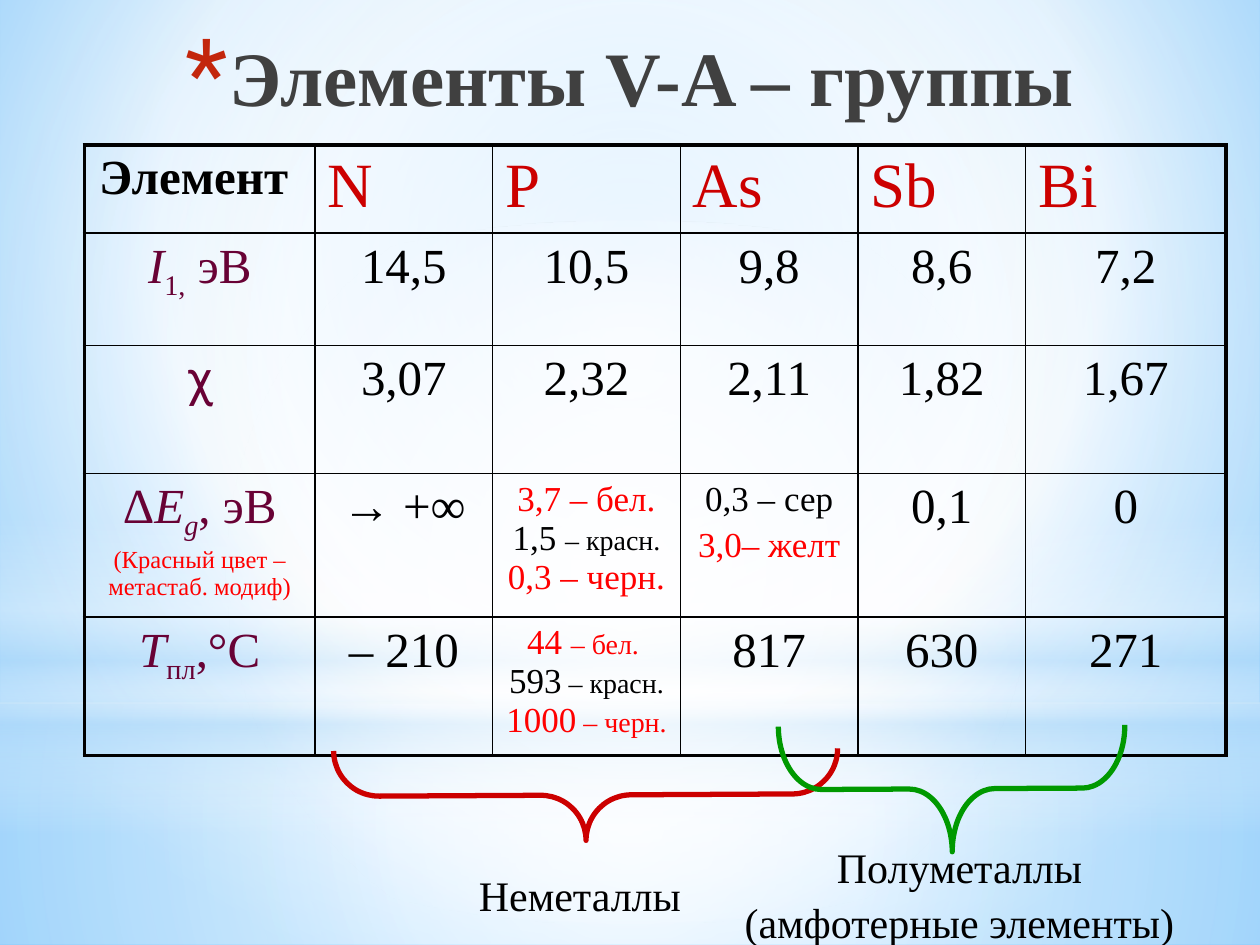
from dataclasses import dataclass

from lxml.etree import SubElement
from pptx import Presentation
from pptx.dml.color import RGBColor
from pptx.enum.shapes import MSO_SHAPE as Form
from pptx.enum.text import MSO_ANCHOR as Anchor, PP_ALIGN as Align
from pptx.oxml import parse_xml
from pptx.oxml.ns import nsdecls, qn
from pptx.util import Inches, Pt


@dataclass(frozen=True)
class Theme:
    font: str = "Times New Roman"
    symbol: str = "Roboto"
    ink: str = "000000"
    title: str = "404040"
    star: str = "C3260C"
    head: str = "CC0000"
    label: str = "680235"
    red: str = "FF0000"
    green: str = "009900"
    white: str = "FFFFFF"
    sky: str = "B4DCFA"
    big: int = 44
    symbols: int = 36
    body: int = 28
    note: int = 24
    small: int = 20
    fine: int = 16
    tiny: int = 14


T = Theme()
COLS = [1.83, 1.41, 1.49, 1.41, 1.33, 1.59]
ROWS = [0.68, 0.89, 1.02, 1.06, 1.02]
LAB = dict(color=T.label)
ITAL = dict(color=T.label, italic=True)
SUB = dict(color=T.label, base=-25)
RED = dict(color=T.red, size=T.small)
BLACK = dict(size=T.small)


def grade(parent, stops, ang=None, to=None):
    """Swap the solid fill in parent for a gradient of (place, colour, opacity)."""
    marks = "".join(
        f'<a:gs pos="{at * 1000}"><a:srgbClr val="{color}">'
        f'<a:alpha val="{alpha * 1000}"/></a:srgbClr></a:gs>'
        for at, color, alpha in stops)
    if to:
        sides = " ".join(f'{k}="{v * 1000}"' for k, v in zip("ltrb", to))
        way = f'<a:path path="circle"><a:fillToRect {sides}/></a:path>'
    else:
        way = f'<a:lin ang="{ang * 60000}" scaled="0"/>'
    parent.replace(parent.find(qn("a:solidFill")), parse_xml(
        f'<a:gradFill rotWithShape="1" {nsdecls("a")}>'
        f'<a:gsLst>{marks}</a:gsLst>{way}</a:gradFill>'))


def glow(slide, form, box, stops, **way):
    shape = slide.shapes.add_shape(form, *map(Inches, box))
    shape.shadow.inherit = False
    shape.line.fill.background()
    shape.fill.solid()
    grade(shape.element.spPr, stops, **way)


def backdrop(slide, wide, high):
    slide.background.fill.solid()
    grade(slide.element.find(".//" + qn("p:bgPr")),
          [(0, "9ED5FF", 100), (60, T.white, 100), (100, "5BB9FF", 100)],
          to=(20, 10, 20, 60))
    mid = (50, 50, 50, 50)
    split = 5.58
    glow(slide, Form.RECTANGLE, (0, split, wide, high - split),
         [(0, T.white, 91), (37, T.white, 76), (100, T.sky, 79)], to=mid)
    glow(slide, Form.RECTANGLE, (0, 0, wide, split),
         [(0, T.white, 89), (48, T.white, 62), (100, T.sky, 79)], to=mid)
    glow(slide, Form.RECTANGLE, (0, 4.12, wide, 2.5),
         [(0, T.white, 0), (29, T.white, 30), (45, T.sky, 40),
          (55, T.white, 26), (65, T.sky, 60), (100, T.white, 0)], ang=90)
    glow(slide, Form.OVAL, (0, 1.75, wide, split),
         [(0, T.white, 100), (56, T.white, 0)], to=mid)


def write(para, text, size=T.body, color=T.ink, font=T.font,
          bold=False, italic=False, base=0):
    run = para.add_run()
    run.text = text
    face = run.font
    face.size, face.name, face.bold, face.italic = Pt(size), font, bold, italic
    face.color.rgb = RGBColor.from_string(color)
    if base:
        face._element.set("baseline", str(base * 1000))


def space(para, share):
    """Set the space before as a percentage of the line."""
    gap = SubElement(para._p.get_or_add_pPr(), qn("a:spcBef"))
    SubElement(gap, qn("a:spcPct")).set("val", str(share * 1000))


def text_box(slide, box):
    frame = slide.shapes.add_textbox(*map(Inches, box)).text_frame
    frame.word_wrap = True
    para = frame.paragraphs[0]
    para.alignment = Align.CENTER
    return frame, para


def title(slide, box):
    frame, para = text_box(slide, box)
    frame.vertical_anchor = Anchor.MIDDLE
    write(para, "Элементы V-A – группы", size=T.big, color=T.title, bold=True)
    props = para._p.get_or_add_pPr()
    props.set("marL", str(Inches(0.35)))
    props.set("indent", str(-Inches(0.35)))
    SubElement(SubElement(props, qn("a:buClr")), qn("a:srgbClr")).set("val", T.star)
    for tag, key, val in [("buSzPct", "val", "128000"),
                          ("buFont", "typeface", T.symbol), ("buChar", "char", "*")]:
        SubElement(props, qn("a:" + tag)).set(key, val)


def plain(*texts):
    return [[[(text, {})]] for text in texts]


def content():
    """Rows of cells; a cell is a list of paragraphs, each a list of runs."""
    head = dict(color=T.head, size=T.symbols)
    fine = dict(size=T.fine)
    pale = dict(color=T.red, size=T.fine)
    return [
        [[[("Элемент ", dict(bold=True))]]]
        + [[[(name, head)]] for name in ("N", "P", "As", "Sb", "Bi")],
        [[[("I", ITAL), ("1,", SUB), (" эВ", LAB)]]]
        + plain("14,5", "10,5", "9,8", "8,6", "7,2"),
        [[[("χ", dict(LAB, font=T.symbol))]]]
        + plain("3,07", "2,32", "2,11", "1,82", "1,67"),
        [[[("Δ", LAB), ("E", ITAL), ("g", dict(ITAL, base=-25)), (", эВ", LAB)],
          [("(Красный цвет – метастаб. модиф)", dict(color=T.red, size=T.tiny))]],
         *plain("→ +∞"),
         [[("3,7 – бел.", RED)], [("1,5 ", BLACK), ("– красн.", fine)],
          [("0,3 – черн.", RED)]],
         [[("0,3 – сер", BLACK)], [("3,0– желт", RED)]],
         *plain("0,1", "0")],
        [[[("T", ITAL), ("пл", SUB), (",°С", LAB)]],
         *plain("– 210"),
         [[("44 ", RED), ("– бел. ", pale)], [("593", BLACK), (" – красн.", fine)],
          [("1000", RED), (" – черн.", pale)]],
         *plain("817", "630", "271")],
    ]


def frame_cell(cell, **widths):
    props = cell._tc.get_or_add_tcPr()
    for i, side in enumerate("LRTB"):
        props.insert(i, parse_xml(
            f'<a:ln{side} w="{Pt(widths[side])}" {nsdecls("a")}><a:solidFill>'
            f'<a:srgbClr val="{T.ink}"/></a:solidFill></a:ln{side}>'))


def fill_cell(cell, paras, align, share):
    cell.fill.background()
    frame = cell.text_frame
    for i, runs in enumerate(paras):
        para = frame.add_paragraph() if i else frame.paragraphs[0]
        para.alignment = align
        space(para, share)
        for text, form in runs:
            write(para, text, **form)


def grid(slide, left, top):
    box = map(Inches, (left, top, sum(COLS), sum(ROWS)))
    table = slide.shapes.add_table(len(ROWS), len(COLS), *box).table
    table.first_row = table.horz_banding = False
    for col, width in zip(table.columns, COLS):
        col.width = Inches(width)
    for row, height in zip(table.rows, ROWS):
        row.height = Inches(height)
    edge = lambda outer: 2.25 if outer else 1
    for r, row in enumerate(content()):
        for c, paras in enumerate(row):
            cell = table.cell(r, c)
            align = Align.LEFT if r == 0 and c else Align.CENTER
            fill_cell(cell, paras, align, 0 if len(paras) == 3 else 20)
            frame_cell(cell, L=edge(c == 0), R=edge(c == len(COLS) - 1),
                       T=edge(r == 0), B=edge(r == len(ROWS) - 1))


def brace(slide, box, color, curve):
    """Draw a brace that opens upwards and fills the box."""
    left, top, wide, high = box
    turned = (left + (wide - high) / 2, top + (high - wide) / 2, high, wide)
    shape = slide.shapes.add_shape(Form.LEFT_BRACE, *map(Inches, turned))
    shape.shadow.inherit = False
    shape.rotation = 269.7
    shape.adjustments[0] = curve
    shape.fill.background()
    shape.line.color.rgb = RGBColor.from_string(color)
    shape.line.width = Pt(3)


def label(slide, box, text):
    para = text_box(slide, box)[1]
    para.line_spacing = 1.1
    space(para, 50)
    write(para, text, size=T.note)


def main():
    deck = Presentation()
    deck.slide_width, deck.slide_height = Inches(10), Inches(7.5)
    slide = deck.slides.add_slide(deck.slide_layouts[6])
    backdrop(slide, 10, 7.5)
    title(slide, (0.75, 0.13, 8.5, 0.94))
    grid(slide, 0.67, 1.15)
    brace(slide, (2.65, 5.95, 4, 0.72), T.head, 0.5)
    label(slide, (2.66, 6.81, 3.97, 0.5), "Неметаллы ")
    brace(slide, (6.18, 5.76, 2.75, 1), T.green, 0.34)
    label(slide, (5.74, 6.59, 3.75, 0.91), "Полуметаллы (амфотерные элементы)")
    deck.save("out.pptx")


if __name__ == "__main__":
    main()
